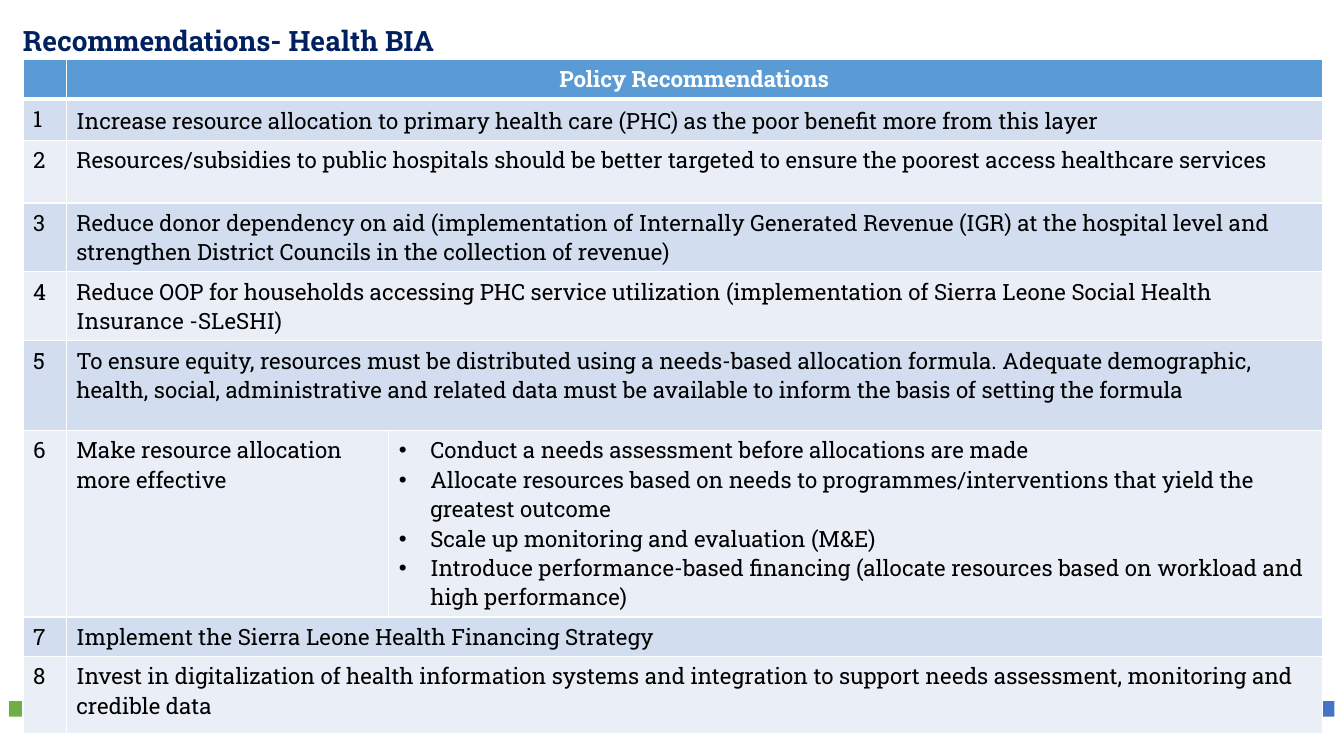
import dataclasses

import lxml.etree
import pptx
import pptx.dml.color
import pptx.enum.shapes
import pptx.enum.text
import pptx.oxml.ns
import pptx.util
from pptx.util import Cm, Pt


@dataclasses.dataclass(frozen=True)
class Theme:
    """Colours, font and type sizes of the slide."""
    font: str = "Roboto Slab"
    title_size: int = 20
    table_size: int = 16
    title: str = "002060"
    ink: str = "000000"
    white: str = "FFFFFF"
    header: str = "5B9BD5"
    bands: tuple = ("D2DEEF", "EAEFF7")
    footer: tuple = ("70AD47", "C5E0B4", "E7E6E6", "9CC2E5", "4472C4")


THEME = Theme()
LEFT = 0.58
COLUMN_WIDTHS = (1.09, 8.13, 23.52)
ROW_HEIGHTS = (0.91, 0.91, 1.57, 1.57, 1.57, 2.26, 4.27, 0.91, 1.93)
RECOMMENDATIONS = (
    "Increase resource allocation to primary health care (PHC) as the poor benefit more from this layer",
    "Resources/subsidies to public hospitals should be better targeted to ensure the poorest access "
    "healthcare services",
    "Reduce donor dependency on aid (implementation of Internally Generated Revenue (IGR) at the hospital "
    "level and strengthen District Councils in the collection of revenue)",
    "Reduce OOP for households accessing PHC service utilization (implementation of Sierra Leone Social "
    "Health Insurance -SLeSHI)",
    "To ensure equity, resources must be distributed using a needs-based allocation formula. Adequate "
    "demographic, health, social, administrative and related data must be available to inform the basis "
    "of setting the formula",
    "Make resource allocation more effective",
    "Implement the Sierra Leone Health Financing Strategy",
    "Invest in digitalization of health information systems and integration to support needs assessment, "
    "monitoring and credible data",
)
DETAILED_ROW = 6
DETAILS = (
    "Conduct a needs assessment before allocations are made",
    "Allocate resources based on needs to programmes/interventions that yield the greatest outcome",
    "Scale up monitoring and evaluation (M&E)",
    "Introduce performance-based financing (allocate resources based on workload and high performance)",
)


def rgb(colour):
    """Return a colour object for a hexadecimal string."""
    return pptx.dml.color.RGBColor.from_string(colour)


def add_element(parent, tag, **attributes):
    """Append a DrawingML element to its parent."""
    return lxml.etree.SubElement(parent, pptx.oxml.ns.qn(tag), **attributes)


def format_text(frame, size, colour, bold=False):
    """Give every run of a text frame its font, size and colour."""
    for para in frame.paragraphs:
        for span in para.runs:
            span.font.name = THEME.font
            span.font.size = Pt(size)
            span.font.bold = bold
            span.font.color.rgb = rgb(colour)
        if not para.runs:
            add_element(para._p, "a:endParaRPr", sz=str(size * 100))


def add_footer(page):
    """Draw the row of coloured bars at the foot of the slide."""
    for index, colour in enumerate(THEME.footer):
        bar = page.shapes.add_shape(pptx.enum.shapes.MSO_SHAPE.RECTANGLE,
                                    Cm(0.23 + 6.8 * index), Cm(17.67), Cm(6.2), Cm(0.39))
        bar.shadow.inherit = False
        bar.fill.solid()
        bar.fill.fore_color.rgb = rgb(colour)
        bar.line.fill.background()


def add_title(page, text):
    """Write the slide title."""
    box = page.shapes.add_textbox(Cm(LEFT), Cm(0.08), Cm(28.47), Cm(2))
    frame = box.text_frame
    frame.word_wrap = True
    frame.vertical_anchor = pptx.enum.text.MSO_ANCHOR.MIDDLE
    frame.margin_left = frame.margin_top = frame.margin_right = frame.margin_bottom = 0
    frame.text = text
    frame.paragraphs[0].line_spacing = 0.9
    format_text(frame, THEME.title_size, THEME.title, bold=True)


def style_cell(cell, row):
    """Set the borders, fill and type of a cell by its row."""
    properties = cell._tc.get_or_add_tcPr()
    widths = {"a:lnL": 1, "a:lnR": 1, "a:lnT": 3 if row == 1 else 1, "a:lnB": 3 if row == 0 else 1}
    for tag, width in widths.items():
        line = add_element(properties, tag, w=str(Pt(width)))
        add_element(add_element(line, "a:solidFill"), "a:srgbClr", val=THEME.white)
    cell.fill.solid()
    cell.fill.fore_color.rgb = rgb(THEME.bands[(row - 1) % 2] if row else THEME.header)
    format_text(cell.text_frame, THEME.table_size, THEME.ink if row else THEME.white, bold=row == 0)


def add_bullets(frame, items):
    """Write items as a bulleted list with a hanging indent."""
    frame.text = "\n".join(items)
    for para in frame.paragraphs:
        properties = para._p.get_or_add_pPr()
        properties.set("marL", str(Cm(0.79)))
        properties.set("indent", str(Cm(-0.79)))
        colour = add_element(properties, "a:buClr")
        add_element(colour, "a:srgbClr", val=THEME.ink)
        add_element(properties, "a:buFont", typeface="Arial")
        add_element(properties, "a:buChar", char="•")


def add_recommendations(page):
    """Build the numbered table of policy recommendations."""
    frame = page.shapes.add_table(len(ROW_HEIGHTS), len(COLUMN_WIDTHS), Cm(LEFT), Cm(1.5),
                                  Cm(sum(COLUMN_WIDTHS)), Cm(sum(ROW_HEIGHTS)))
    table = frame.table
    for column, width in zip(table.columns, COLUMN_WIDTHS):
        column.width = Cm(width)
    for row, height in zip(table.rows, ROW_HEIGHTS):
        row.height = Cm(height)
    for row, text in enumerate(("Policy Recommendations", *RECOMMENDATIONS)):
        table.cell(row, 0).text_frame.text = str(row) if row else ""
        table.cell(row, 1).text_frame.text = text
        if row == DETAILED_ROW:
            add_bullets(table.cell(row, 2).text_frame, DETAILS)
        else:
            table.cell(row, 1).merge(table.cell(row, 2))
        for column in range(len(COLUMN_WIDTHS)):
            style_cell(table.cell(row, column), row)
    table.cell(0, 1).text_frame.paragraphs[0].alignment = pptx.enum.text.PP_ALIGN.CENTER
    first = table.cell(1, 1).text_frame.paragraphs[0]
    first.alignment = pptx.enum.text.PP_ALIGN.JUSTIFY
    first.line_spacing = 1.07


def main():
    """Build and save the slide."""
    deck = pptx.Presentation()
    deck.slide_width, deck.slide_height = Cm(33.87), Cm(19.05)
    page = deck.slides.add_slide(deck.slide_layouts[6])
    add_footer(page)
    add_recommendations(page)
    add_title(page, "Recommendations- Health BIA")
    deck.save("out.pptx")


if __name__ == "__main__":
    main()
